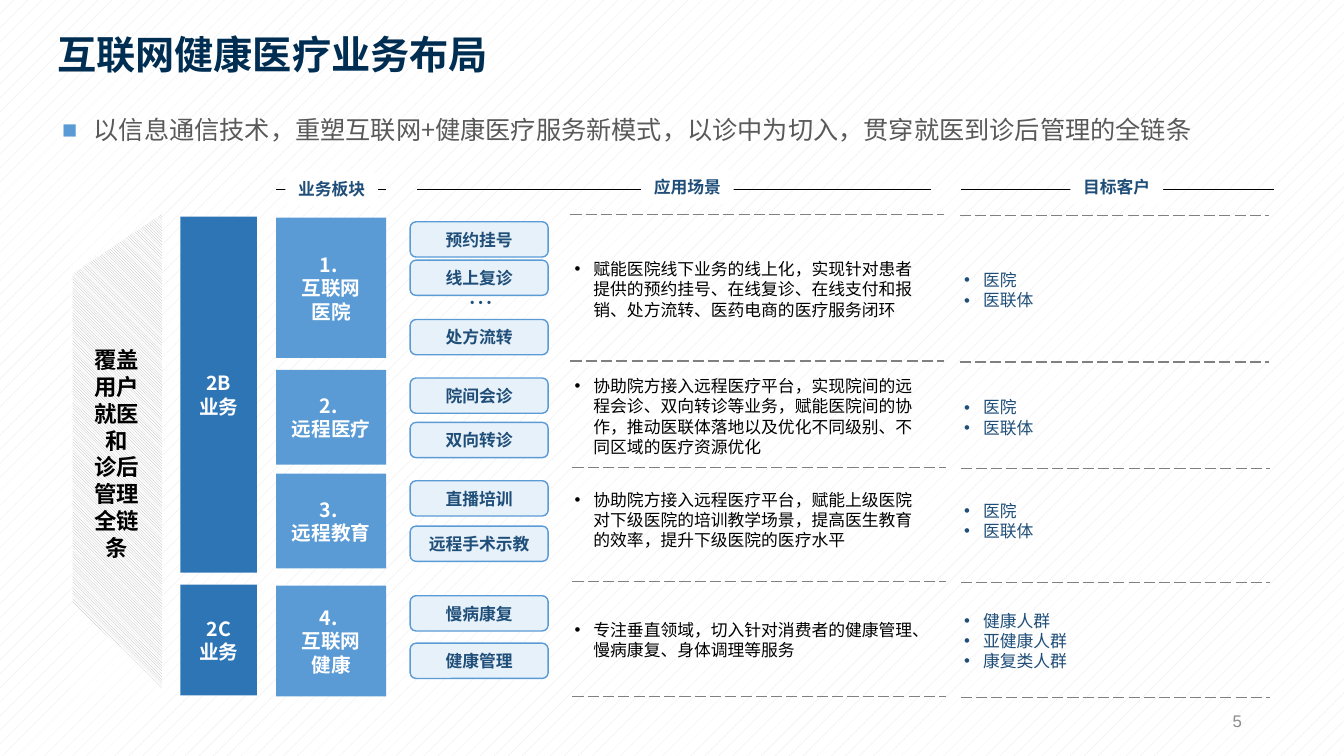
from lxml import etree
from pptx import Presentation
from pptx import util as u
from pptx.dml import color
from pptx.enum import dml, shapes, text
from pptx.oxml import ns

CJK = "Noto Sans CJK SC"
NAVY, BLUE, DEEP = "1F4E79", "5B9BD5", "2E75B6"
BLACK, WHITE, GREY = "000000", "FFFFFF", "808080"
CENTER, RIGHT = text.PP_ALIGN.CENTER, text.PP_ALIGN.RIGHT

RULES = [  # left, right, label left, label top, label
    (197.3, 275.8, 203.8, 123.1, "业务板块"),
    (298.1, 665.3, 457.9, 121.7, "应用场景"),
    (686.2, 910.1, 764.6, 121.7, "目标客户"),
]
GROUPS = [(154.8, 254.2, ["2B", "业务"]), (417.6, 79.2, ["2C", "业务"])]
SEGMENTS = [
    (155.5, 100.1, ["1. ", "互联网", "医院"]),
    (264.2, 67.7, ["2. ", "远程医疗"]),
    (338.4, 67.7, ["3. ", "远程教育"]),
    (418.3, 79.2, ["4. ", "互联网", "健康"]),
]
SERVICES = [
    (158.4, "预约挂号"), (185.8, "线上复诊"), (228.2, "处方流转"),
    (270, "院间会诊"), (301.7, "双向转诊"),
    (343.4, "直播培训"), (375.8, "远程手术示教"),
    (425.5, "慢病康复"), (459.4, "健康管理"),
]
ROWS = [  # top, height, scene, clients
    (167, 79.2, "赋能医院线下业务的线上化，实现针对患者提供的预约挂号、在线复诊、在线支付和报销、"
     "处方流转、医药电商的医疗服务闭环", ["医院", "医联体"]),
    (257.8, 79.2, "协助院方接入远程医疗平台，实现院间的远程会诊、双向转诊等业务，赋能医院间的协作，"
     "推动医联体落地以及优化不同级别、不同区域的医疗资源优化", ["医院", "医联体"]),
    (338.4, 66.2, "协助院方接入远程医疗平台，赋能上级医院对下级医院的培训教学场景，提高医生教育的效率，"
     "提升下级医院的医疗水平", ["医院", "医联体"]),
    (417.6, 79.2, "专注垂直领域，切入针对消费者的健康管理、慢病康复、身体调理等服务",
     ["健康人群", "亚健康人群", "康复类人群"]),
]
DIVIDERS = [153.4, 257.8, 334.1, 415.4, 497.5]


def rgb(value):
    return color.RGBColor.from_string(value)


def apply(target, values):
    for name, value in values.items():
        setattr(target, name, value)


def child(parent, tag, **attributes):
    return etree.SubElement(parent, ns.qn(tag), attributes)


def pattern(fill, kind, front):
    fill.patterned()
    fill.pattern = kind
    fill.fore_color.rgb, fill.back_color.rgb = rgb(front), rgb(WHITE)


def add_bullet(para, mark, tint, indent):
    props = para._p.get_or_add_pPr()
    props.set("marL", str(u.Pt(indent)))
    props.set("indent", str(-u.Pt(indent)))
    if tint:
        child(child(props, "a:buClr"), "a:srgbClr", val=tint)
    child(props, "a:buFont", typeface="Arial")
    child(props, "a:buChar", char=mark)


def write(shape, lines, size, tint, bold=False, font=CJK, align=None, spacing=None,
          margins=(7.2, 3.6), middle=True, bullet=None):
    """Fill a shape with one paragraph per line; bullet is (mark, colour, indent)."""
    side, edge = (u.Pt(margin) for margin in margins)
    anchor = text.MSO_ANCHOR.MIDDLE if middle else text.MSO_ANCHOR.TOP
    frame = shape.text_frame
    apply(frame, {"word_wrap": True, "vertical_anchor": anchor, "margin_left": side,
                  "margin_right": side, "margin_top": edge, "margin_bottom": edge})
    for index, line in enumerate(lines):
        para = frame.add_paragraph() if index else frame.paragraphs[0]
        apply(para, {"alignment": align or text.PP_ALIGN.LEFT, "line_spacing": spacing})
        if bullet:
            add_bullet(para, *bullet)
        span = para.add_run()
        span.text = line
        apply(span.font, {"size": u.Pt(size), "bold": bold, "name": font})
        span.font.color.rgb = rgb(tint)
        child(span._r.get_or_add_rPr(), "a:ea", typeface=font)


def add_text(page, area, lines, size, tint, **style):
    box = page.shapes.add_textbox(*map(u.Pt, area))
    write(box, lines, size, tint, **style)


def add_box(page, area, fill=None, line=None, rounded=False):
    box = page.shapes.add_shape(shapes.MSO_SHAPE.ROUNDED_RECTANGLE, *map(u.Pt, area))
    box.shadow.inherit = False
    if not rounded:
        box.adjustments[0] = 0
    if fill:
        box.fill.solid()
        box.fill.fore_color.rgb = rgb(fill)
    else:
        box.fill.background()
    if line:
        box.line.color.rgb = rgb(line)
        box.line.width = u.Pt(1)
    else:
        box.line.fill.background()
    return box


def add_rule(page, left, right, top, tint, width, dash=None):
    rule = page.shapes.add_connector(shapes.MSO_CONNECTOR.STRAIGHT,
                                     *map(u.Pt, (left, top, right, top)))
    rule.line.color.rgb = rgb(tint)
    apply(rule.line, {"width": u.Pt(width), "dash_style": dash})
    child(rule._element.spPr, "a:effectLst")


def add_chain_banner(page):
    corners = [(115.9, 491.8), (51.8, 430.6), (51.8, 195.8), (115.9, 152.6)]
    start, *others = [(u.Pt(x), u.Pt(y)) for x, y in corners]
    builder = page.shapes.build_freeform(*start)
    builder.add_line_segments(others, close=True)
    hatch = builder.convert_to_shape()
    hatch.shadow.inherit = False
    hatch.line.fill.background()
    pattern(hatch.fill, dml.MSO_PATTERN.DARK_DOWNWARD_DIAGONAL, GREY)
    veil = add_box(page, (49.7, 151.2, 67, 345.6), WHITE)
    tint = veil._element.spPr.find(".//" + ns.qn("a:srgbClr"))
    child(tint, "a:alpha", val="40000")
    write(veil, ["覆盖用户就医和", "诊后管理全链条"], 16, BLACK, bold=True,
          align=CENTER, margins=(14.4, 3.6))


def add_tiles(page, left, width, tiles, fill):
    for top, height, lines in tiles:
        tile = add_box(page, (left, top, width, height), fill)
        write(tile, lines, 14, WHITE, bold=True, align=CENTER, margins=(8.6, 3.6))


def add_label(page, area, label, fill, line=None):
    box = add_box(page, area, fill, line, rounded=True)
    write(box, [label], 12, NAVY, bold=True, align=CENTER, margins=(2.9, 3.6))


def add_list(page, area, lines, tint):
    write(add_box(page, area), lines, 12, tint, margins=(2.9, 3.6), bullet=("•", None, 13.5))


def main():
    deck = Presentation()
    apply(deck, {"slide_width": u.Pt(960), "slide_height": u.Pt(540)})
    page = deck.slides.add_slide(deck.slide_layouts[6])
    pattern(page.background.fill, dml.MSO_PATTERN.PERCENT_5, "E7E6E6")

    add_text(page, (33.8, 18, 383.8, 41), ["互联网健康医疗业务布局"], 28, "002E52",
             bold=True, middle=False)
    add_text(page, (37.4, 80.6, 887.8, 26.6),
             ["以信息通信技术，重塑互联网+健康医疗服务新模式，以诊中为切入，贯穿就医到诊后管理的全链条"],
             18, "595959", spacing=0.9, middle=False, bullet=("■", BLUE, 22.5))
    add_chain_banner(page)
    add_tiles(page, 128.9, 54.7, GROUPS, DEEP)
    add_tiles(page, 197.3, 78.5, SEGMENTS, BLUE)
    for top, label in SERVICES:
        add_label(page, (293, top, 98.6, 25.2), label, "E7F1F9", BLUE)
    add_text(page, (329.8, 201.6, 28, 25.2), ["…"], 18, NAVY, align=CENTER,
             margins=(0, 3.6), middle=False)
    for left, right, label_left, label_top, label in RULES:
        add_rule(page, left, right, 135.4, BLACK, 0.5)
        add_label(page, (label_left, label_top, 66.2, 23.8), label, WHITE)
    for top, height, scene, clients in ROWS:
        add_list(page, (407.5, top, 256.3, height), [scene], BLACK)
        add_list(page, (685.8, top + 0.7, 212.4, height), clients, NAVY)
    for index, top in enumerate(DIVIDERS):
        shift = 0.7 if index > 1 else 0
        for left, width, drop in ((407.5 + 2 * shift, 267.1, 0), (685.4 + shift, 221, 0.7)):
            add_rule(page, left, left + width, top + drop, GREY, 1, dml.MSO_LINE.LONG_DASH)
    add_text(page, (678.2, 500.4, 216, 28.8), ["5"], 12, "8C8C8C", font="Arial", align=RIGHT)
    deck.save("out.pptx")


if __name__ == "__main__":
    main()
